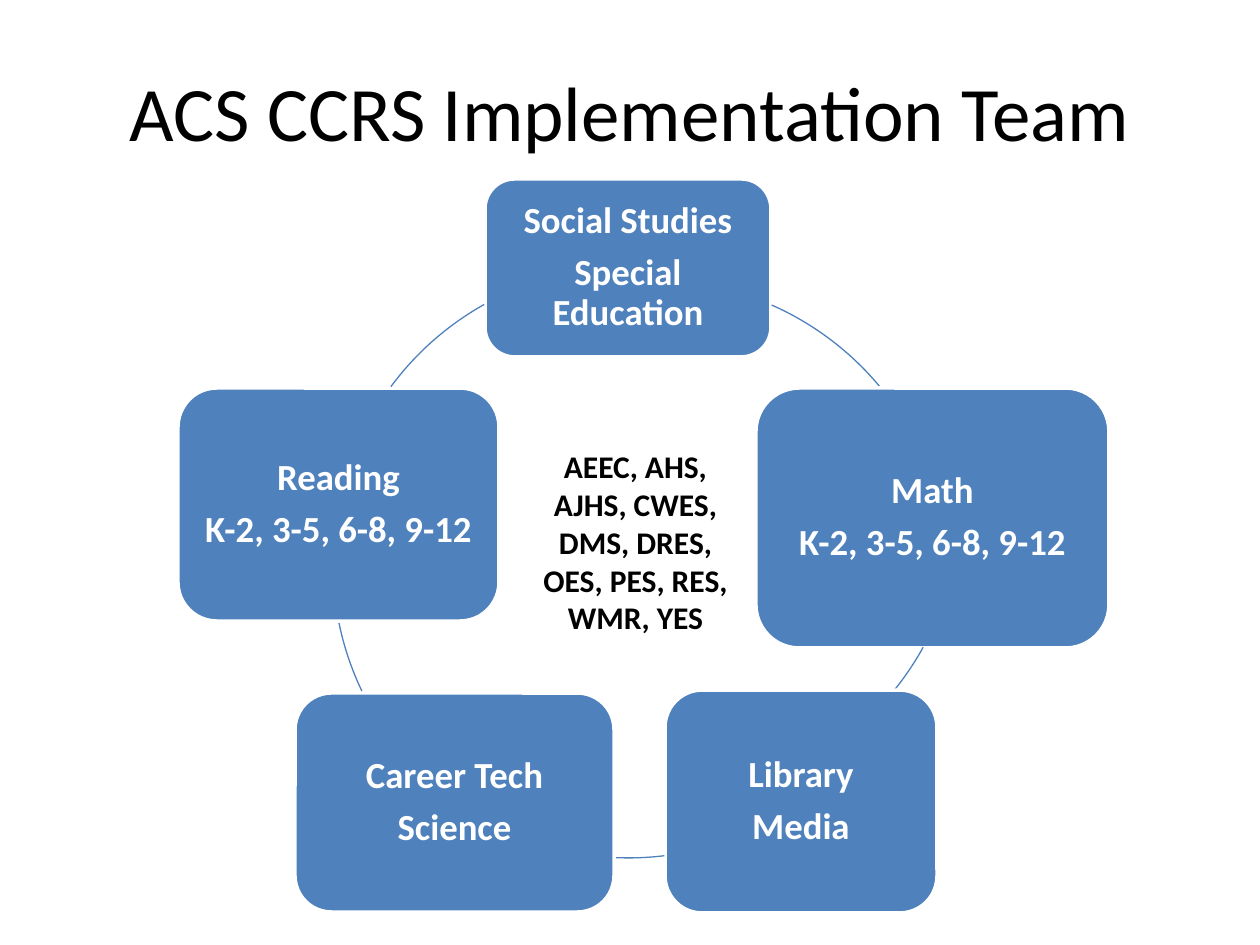
from pptx import Presentation
from pptx.dml.color import RGBColor
from pptx.enum.shapes import MSO_SHAPE
from pptx.enum.text import MSO_ANCHOR, PP_ALIGN
from pptx.util import Emu, Pt

ROUND, ARC = MSO_SHAPE.ROUNDED_RECTANGLE, MSO_SHAPE.ARC
MIDDLE, CENTER = MSO_ANCHOR.MIDDLE, PP_ALIGN.CENTER
BLUE, WHITE, BLACK = "4F81BD", "FFFFFF", "000000"
FONT = "Calibri"
RING = 591  # diameter of the ring
INSET = 11

TITLE = "ACS CCRS Implementation Team"
GRADES = "K-2, 3-5, 6-8, 9-12"
SCHOOLS = "AEEC, AHS, AJHS, CWES, DMS, DRES, OES, PES, RES, WMR, YES"

# Clockwise from the top: lines, box (left, top, width, height)
TEAMS = [
    (["Social Studies", "Special Education"], (485, 179, 286, 178)),
    (["Math", GRADES], (756, 388, 353, 260)),
    (["Library", "Media"], (665, 690, 272, 223)),
    (["Career Tech", "Science"], (295, 693, 319, 219)),
    (["Reading", GRADES], (178, 388, 321, 233)),
]
# Links between teams: left, top, start and end angle in degrees
LINKS = [
    (357, 280, 293.8, 320.4),
    (369, 209, 28.9, 38.9),
    (333, 267, 83, 92.8),
    (333, 268, 154.4, 168.6),
    (333, 267, 216.5, 240.8),
]


def px(n):
    return Emu(round(n * 914400 / 126))


def place(box):
    return [px(n) for n in box]


def color(code):
    return RGBColor.from_string(code)


def style(para, size, code, bold=False):
    para.alignment = CENTER
    font = para.font
    font.name, font.size, font.bold = FONT, Pt(size), bold
    font.color.rgb = color(code)


def add_team(shapes, lines, box):
    shape = shapes.add_shape(ROUND, *place(box))
    shape.shadow.inherit = False
    shape.fill.solid()
    shape.fill.fore_color.rgb = color(BLUE)
    shape.line.color.rgb = color(WHITE)
    shape.line.width = Pt(2)
    frame = shape.text_frame
    frame.word_wrap = True
    frame.vertical_anchor = MIDDLE
    frame.margin_left = frame.margin_right = px(INSET)
    frame.margin_top = frame.margin_bottom = px(INSET)
    frame.text = "\n".join(lines)
    for para in frame.paragraphs:
        style(para, 21, WHITE, True)
        para.line_spacing = 0.9
        para.space_after = Pt(7)


def add_link(shapes, left, top, start, end):
    arc = shapes.add_shape(ARC, *place((left, top, RING, RING)))
    arc.shadow.inherit = False
    arc.fill.background()
    arc.line.color.rgb = color(BLUE)
    arc.line.width = Pt(0.75)
    for i, angle in enumerate((start, end)):
        arc.adjustments[i] = angle * 0.6  # 60000 units a degree, over 100000


def main():
    deck = Presentation()
    deck.slide_width, deck.slide_height = px(1260), px(945)
    slide = deck.slides.add_slide(deck.slide_layouts[5])
    shapes = slide.shapes

    title = shapes.title
    title.left, title.top, title.width, title.height = place((63, 32, 1134, 157))
    title.text_frame.text = TITLE
    title.text_frame.vertical_anchor = MIDDLE
    style(title.text_frame.paragraphs[0], 44, BLACK)

    for (lines, box), link in zip(TEAMS, LINKS):
        add_team(shapes, lines, box)
        add_link(shapes, *link)

    note = shapes.add_textbox(*place((525, 441, 221, 204))).text_frame
    note.word_wrap = True
    note.text = SCHOOLS
    style(note.paragraphs[0], 18, BLACK, True)

    deck.save("out.pptx")


if __name__ == "__main__":
    main()
